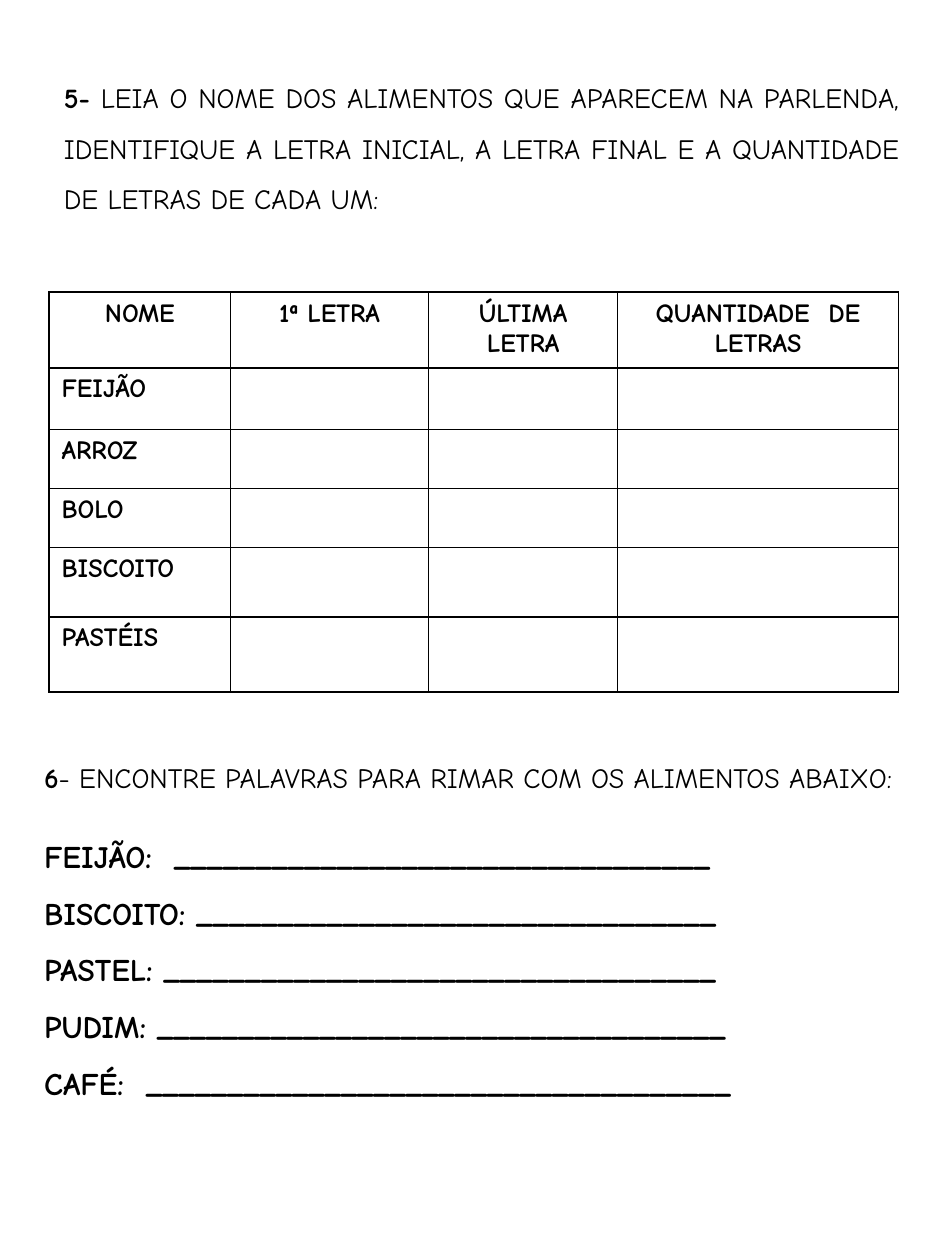
from dataclasses import dataclass

import lxml.etree
import pptx
import pptx.dml.color
import pptx.enum.text
import pptx.oxml.ns
import pptx.util

Cm = pptx.util.Cm
Pt = pptx.util.Pt
Align = pptx.enum.text.PP_ALIGN


@dataclass(frozen=True)
class Theme:
    font: str = "Comic Neue"
    ink: str = "000000"
    paper: str = "FFFFFF"
    task: int = 16
    grid: int = 15
    rhyme: int = 18
    rule: int = 1
    spacing: float = 1.5
    gap: int = 14


@dataclass(frozen=True)
class Box:
    left: float
    top: float
    width: float
    height: float

    def place(self) -> tuple:
        return Cm(self.left), Cm(self.top), Cm(self.width), Cm(self.height)


@dataclass(frozen=True)
class Task:
    mark: str
    text: str
    box: Box
    align: Align


@dataclass(frozen=True)
class Rhyme:
    label: str
    count: int


THEME = Theme()
READ = Task(
    "5-",
    " LEIA O NOME DOS ALIMENTOS QUE APARECEM NA PARLENDA, IDENTIFIQUE A LETRA INICIAL, "
    "A LETRA FINAL E A QUANTIDADE DE LETRAS DE CADA UM:",
    Box(1.04, 1.17, 17.35, 4.37),
    Align.JUSTIFY,
)
MATCH = Task(
    "6",
    "- ENCONTRE PALAVRAS PARA RIMAR COM OS ALIMENTOS ABAIXO:",
    Box(0.64, 14.86, 18.39, 8.59),
    Align.LEFT,
)
RHYMES = [
    Rhyme("FEIJÃO:  ", 33),
    Rhyme("BISCOITO: ", 32),
    Rhyme("PASTEL: ", 34),
    Rhyme("PUDIM: ", 35),
    Rhyme("CAFÉ:  ", 36),
]
HEADS = ["NOME", "1ª LETRA", "ÚLTIMA LETRA", "QUANTIDADE  DE LETRAS"]
FOODS = ["FEIJÃO", "ARROZ", "BOLO", "BISCOITO", "PASTÉIS"]
WIDTHS = [3.66, 3.99, 3.81, 5.66]
HEIGHTS = [1.52, 1.24, 1.19, 1.19, 1.4, 1.52]
GRID = Box(0.99, 5.89, sum(WIDTHS), sum(HEIGHTS))


def color(code: str) -> pptx.dml.color.RGBColor:
    return pptx.dml.color.RGBColor.from_string(code)


def style(run, size: int, bold: bool = True) -> None:
    run.font.name = THEME.font
    run.font.size = Pt(size)
    run.font.bold = bold
    run.font.color.rgb = color(THEME.ink)


def add_task(slide, task: Task):
    """Draw a numbered instruction and return its text frame."""
    frame = slide.shapes.add_textbox(*task.box.place()).text_frame
    frame.word_wrap = True
    frame.auto_size = pptx.enum.text.MSO_AUTO_SIZE.SHAPE_TO_FIT_TEXT
    par = frame.paragraphs[0]
    par.alignment = task.align
    par.line_spacing = THEME.spacing
    for text, bold in ((task.mark, True), (task.text, False)):
        run = par.add_run()
        run.text = text
        style(run, THEME.task, bold)
    return frame


def add_rhyme(frame, rhyme: Rhyme, gap: int) -> None:
    par = frame.add_paragraph()
    par.text = rhyme.label + "_" * rhyme.count
    par.line_spacing = THEME.spacing
    par.space_before = Pt(gap)
    style(par.runs[0], THEME.rhyme)


def add_edges(cell) -> None:
    """Rule all four sides; the schema wants the lines ahead of the fill."""
    props = cell._tc.get_or_add_tcPr()
    qn = pptx.oxml.ns.qn
    for spot, side in enumerate(("lnL", "lnR", "lnT", "lnB")):
        line = lxml.etree.Element(qn(f"a:{side}"), w=str(Pt(THEME.rule)))
        fill = lxml.etree.SubElement(line, qn("a:solidFill"))
        lxml.etree.SubElement(fill, qn("a:srgbClr"), val=THEME.ink)
        props.insert(spot, line)


def add_grid(slide) -> None:
    rows = [HEADS] + [[food, "", "", ""] for food in FOODS]
    table = slide.shapes.add_table(len(rows), len(HEADS), *GRID.place()).table
    table.first_row = table.horz_banding = False
    for col, width in zip(table.columns, WIDTHS):
        col.width = Cm(width)
    for row, height, texts in zip(table.rows, HEIGHTS, rows):
        row.height = Cm(height)
        for cell, text in zip(row.cells, texts):
            cell.fill.solid()
            cell.fill.fore_color.rgb = color(THEME.paper)
            add_edges(cell)
            if text:
                par = cell.text_frame.paragraphs[0]
                par.text = text
                par.alignment = Align.CENTER if texts is HEADS else Align.LEFT
                style(par.runs[0], THEME.grid)


def main() -> None:
    deck = pptx.Presentation()
    deck.slide_width, deck.slide_height = Cm(19.05), Cm(25.4)
    slide = deck.slides.add_slide(deck.slide_layouts[6])
    add_task(slide, READ)
    add_grid(slide)
    frame = add_task(slide, MATCH)
    for spot, rhyme in enumerate(RHYMES):
        add_rhyme(frame, rhyme, 0 if spot else THEME.gap)
    deck.save("out.pptx")


if __name__ == "__main__":
    main()
